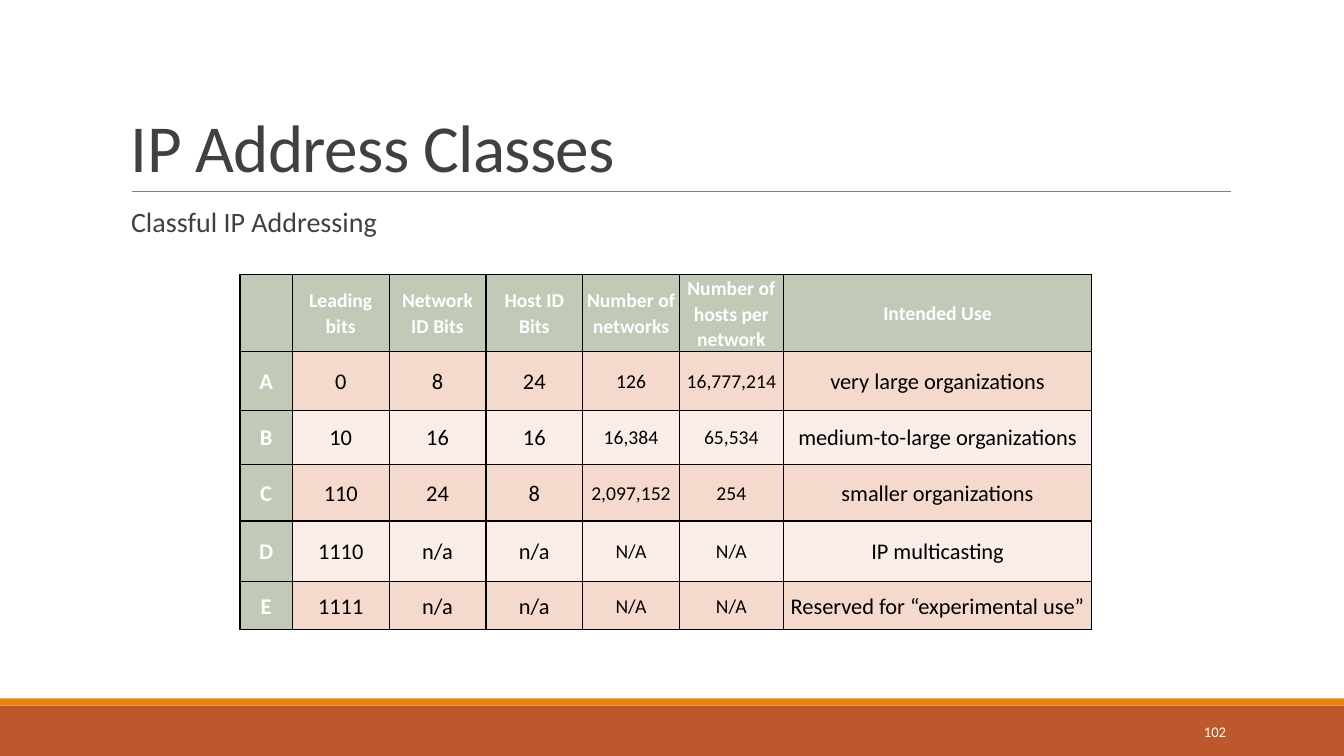
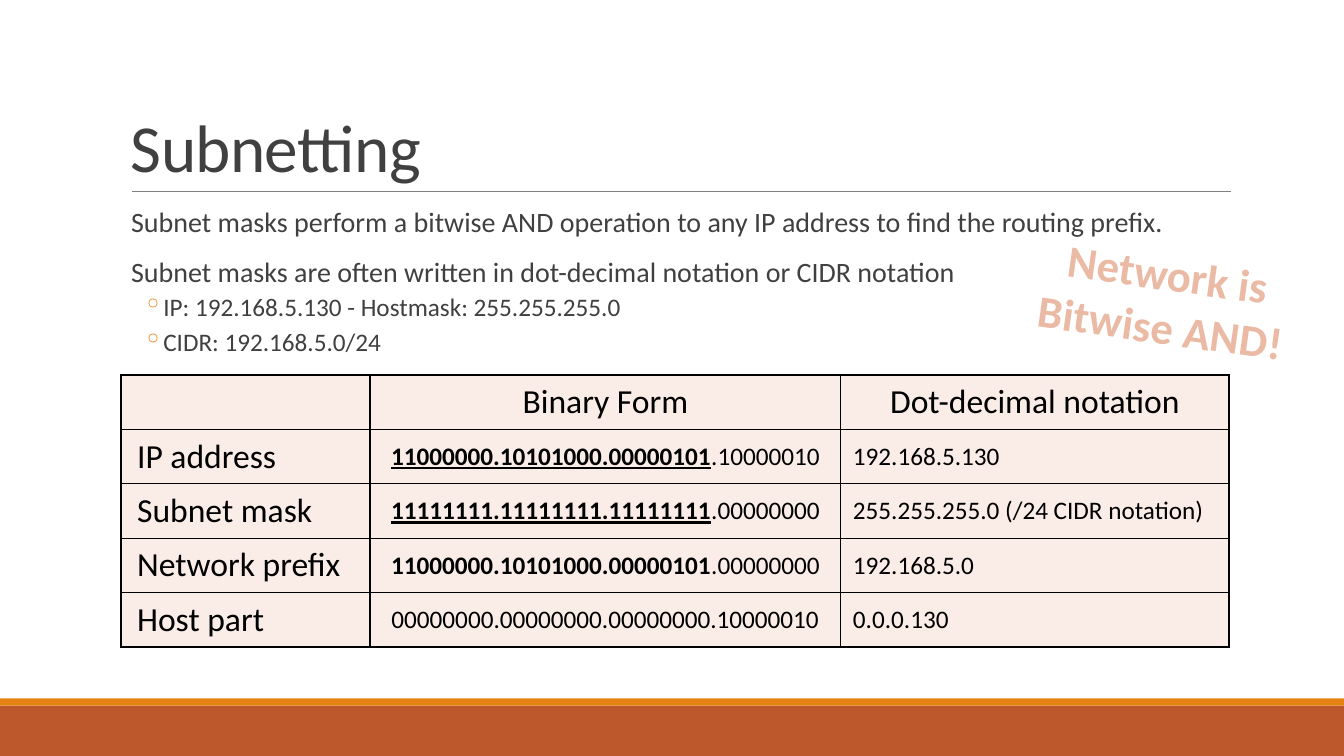
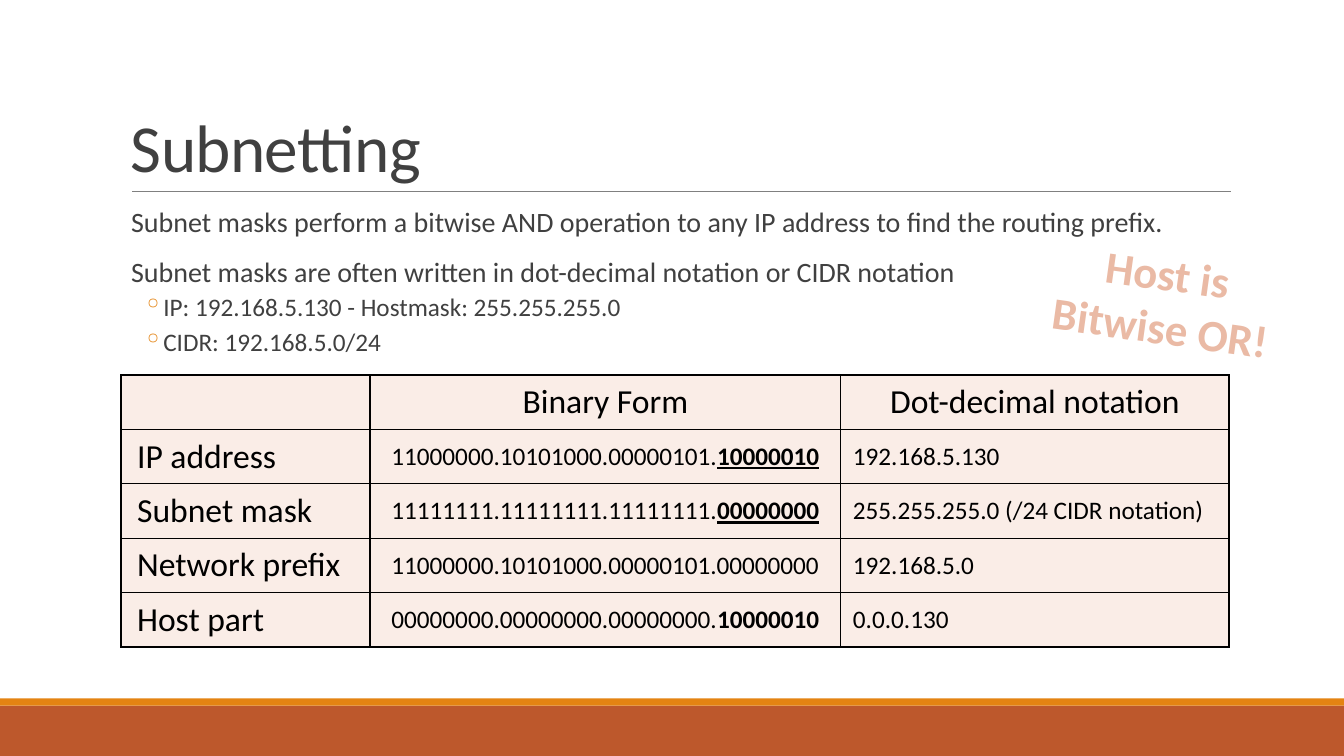
"""Build three slides on IP address classes and subnetting."""
from lxml.etree import SubElement
from pptx import Presentation
from pptx.dml.color import RGBColor
from pptx.enum.shapes import MSO_CONNECTOR as Connector, MSO_SHAPE as Shape
from pptx.enum.text import MSO_ANCHOR as Anchor, PP_ALIGN as Align
from pptx.oxml.ns import qn
from pptx.util import Inches, Pt

FONT = "Calibri"
COLORS = {
    "band": "BD582C", "stripe": "E48312", "rule": "808080", "text": "404040",
    "white": "FFFFFF", "black": "000000", "head": "C1CAB6",
    "odd": "F5D9CC", "even": "FAEDE7", "note": "EABAA5",
}
CLASS_HEADS = ["", "Leading bits", "Network ID Bits", "Host ID Bits",
               "Number of networks", "Number of hosts per network", "Intended Use"]
CLASS_ROWS = [
    ["A", "0", "8", "24", "126", "16,777,214", "very large organizations"],
    ["B", "10", "16", "16", "16,384", "65,534", "medium-to-large organizations"],
    ["C", "110", "24", "8", "2,097,152", "254", "smaller organizations"],
    ["D", "1110", "n/a", "n/a", "N/A", "N/A", "IP multicasting"],
    ["E", "1111", "n/a", "n/a", "N/A", "N/A", "Reserved for “experimental use”"],
]
SUBNET_TOPICS = [
    ("Subnet masks perform a bitwise AND operation to any IP address to find the routing prefix.", 0),
    ("Subnet masks are often written in dot-decimal notation or CIDR notation", 0),
    ("IP: 192.168.5.130 - Hostmask: 255.255.255.0", 1),
    ("CIDR: 192.168.5.0/24", 1),
]
SUBNET_ROWS = [
    ("IP address", "11000000.10101000.00000101.10000010", "192.168.5.130"),
    ("Subnet mask", "11111111.11111111.11111111.00000000", "255.255.255.0 (/24 CIDR notation)"),
    ("Network prefix", "11000000.10101000.00000101.00000000", "192.168.5.0"),
    ("Host part", "00000000.00000000.00000000.10000010", "0.0.0.130"),
]


def rgb(name):
    """Return a named colour."""
    return RGBColor.from_string(COLORS[name])


def write(para, text, size=20, color="text", bold=False, underline=False,
          align=Align.LEFT, line=1.0, before=0, after=0):
    """Add a formatted span to a paragraph."""
    para.alignment, para.line_spacing = align, line
    para.space_before, para.space_after = Pt(before), Pt(after)
    span = para.add_run()
    span.text = text
    font = span.font
    font.name, font.size, font.bold, font.underline = FONT, Pt(size), bold, underline
    font.color.rgb = rgb(color)
    return span


def add_box(page, left, top, width, height, anchor=Anchor.TOP, side=0.1):
    """Add a wrapping text box."""
    box = page.shapes.add_textbox(*map(Inches, (left, top, width, height)))
    frame = box.text_frame
    frame.word_wrap, frame.vertical_anchor = True, anchor
    frame.margin_left = frame.margin_right = Inches(side)
    return box


def add_band(page, top, height, color):
    """Add a full-width band."""
    band = page.shapes.add_shape(Shape.RECTANGLE, 0, Inches(top), Inches(13.33), Inches(height))
    band.shadow.inherit = False
    band.fill.solid()
    band.fill.fore_color.rgb = rgb(color)
    band.line.fill.background()


def add_page(deck, title):
    """Add a page with the shared bands, rule and title."""
    page = deck.slides.add_slide(deck.slide_layouts[6])
    add_band(page, 7, 0.5, "band")
    add_band(page, 6.93, 0.07, "stripe")
    rule = page.shapes.add_connector(Connector.STRAIGHT, *map(Inches, (1.31, 1.9, 12.21, 1.9)))
    rule.line.color.rgb, rule.line.width = rgb("rule"), Pt(0.5)
    SubElement(rule.element.spPr, qn("a:effectLst"))
    box = add_box(page, 1.2, 0.31, 11, 1.59, Anchor.BOTTOM)
    span = write(box.text_frame.paragraphs[0], title, size=48, line=0.85)
    span.font.element.set("spc", "-50") if hasattr(span.font, "element") else span._r.get_or_add_rPr().set("spc", "-50")
    return page


def add_bullet(para, left, hang):
    """Give a paragraph a hanging ring bullet."""
    props = para._p.get_or_add_pPr()
    props.set("marL", str(Inches(left)))
    props.set("indent", str(Inches(-hang)))
    color = SubElement(props, qn("a:buClr"))
    SubElement(color, qn("a:srgbClr"), val=COLORS["stripe"])
    SubElement(props, qn("a:buChar"), char="◦")


def add_body(page, topics):
    """Add the body text with its two outline levels."""
    frame = add_box(page, 1.2, 2.02, 11, 4.4, side=0).text_frame
    for index, (text, level) in enumerate(topics):
        para = frame.add_paragraph() if index else frame.paragraphs[0]
        if level:
            write(para, text, size=18, line=0.9, before=2, after=4)
            add_bullet(para, 0.42, 0.2)
        else:
            write(para, text, line=0.9, before=12, after=2)
            para._p.get_or_add_pPr().set("marL", str(Inches(0.1)))


def add_grid(page, left, top, widths, heights):
    """Add a plain table and return it."""
    table = page.shapes.add_table(len(heights), len(widths), *map(
        Inches, (left, top, sum(widths), sum(heights)))).table
    table.first_row = table.horz_banding = False
    for column, width in zip(table.columns, widths):
        column.width = Inches(width)
    for row, height in zip(table.rows, heights):
        row.height = Inches(height)
    return table


def style_cell(cell, fill, margin, left=None):
    """Set borders, fill and margins of a cell and return its paragraph."""
    props = cell._tc.get_or_add_tcPr()
    for side in ("lnL", "lnR", "lnT", "lnB"):
        border = SubElement(props, qn(f"a:{side}"), w=str(Pt(1)))
        SubElement(SubElement(border, qn("a:solidFill")), qn("a:srgbClr"), val=COLORS["black"])
    cell.fill.solid()
    cell.fill.fore_color.rgb = rgb(fill)
    cell.vertical_anchor = Anchor.MIDDLE
    cell.margin_right = cell.margin_top = cell.margin_bottom = Inches(margin)
    cell.margin_left = Inches(margin if left is None else left)
    return cell.text_frame.paragraphs[0]


def add_note(page, text):
    """Add the tilted outlined note."""
    box = add_box(page, 10.2, 2.39, 2.69, 1.18)
    box.rotation = 8
    span = write(box.text_frame.paragraphs[0], text, size=32, color="note",
                 bold=True, align=Align.CENTER)
    props = span._r.get_or_add_rPr()
    outline = SubElement(props, qn("a:ln"), w=str(Pt(1.75)))
    SubElement(SubElement(outline, qn("a:solidFill")), qn("a:srgbClr"), val=COLORS["band"])
    props.insert(0, outline)


def add_classes_page(deck):
    """Build the page on address classes."""
    page = add_page(deck, "IP Address Classes")
    add_body(page, [("Classful IP Addressing", 0)])
    number = add_box(page, 10.83, 7.06, 1.43, 0.4, Anchor.MIDDLE)
    write(number.text_frame.paragraphs[0], "102", size=10.5, color="white", align=Align.RIGHT)
    table = add_grid(page, 2.38, 2.72, [0.52] + [0.96] * 4 + [1.03, 3.06],
                     [0.76, 0.58, 0.54, 0.56, 0.6, 0.48])
    for row, texts in enumerate([CLASS_HEADS] + CLASS_ROWS):
        for column, text in enumerate(texts):
            head, count = row == 0 or column == 0, column in (4, 5)
            fill = "head" if head else "odd" if row % 2 else "even"
            para = style_cell(table.cell(row, column), fill, 0.01 if count else 0.03)
            if text:
                write(para, text, size=14 if row == 0 or count else 16, bold=head,
                      color="white" if head else "black", align=Align.CENTER, line=1.07)


def add_subnet_page(deck, note, split, marks):
    """Build a subnetting page that stresses one side of each binary value."""
    page = add_page(deck, "Subnetting")
    add_body(page, SUBNET_TOPICS)
    table = add_grid(page, 1.2, 3.72, [2.47, 4.67, 3.85], [0.54] * 5)
    for column, text in enumerate(("", "Binary Form", "Dot-decimal notation")):
        para = style_cell(table.cell(0, column), "even", 0.01)
        if text:
            write(para, text, size=24, color="black", align=Align.CENTER)
    stressed = 0 if note.startswith("Network") else 1
    for row, ((label, binary, decimal), mark) in enumerate(zip(SUBNET_ROWS, marks), 1):
        write(style_cell(table.cell(row, 0), "even", 0.01, 0.16), label, size=24, color="black")
        para = style_cell(table.cell(row, 1), "even", 0.01)
        for side, part in enumerate((binary[:split], binary[split:])):
            bold = side == stressed and mark != "plain"
            write(para, part, size=18, color="black", bold=bold,
                  underline=bold and mark == "underline", align=Align.CENTER)
        write(style_cell(table.cell(row, 2), "even", 0.01, 0.12), decimal, size=18, color="black")
    add_note(page, note)


def main():
    """Build and save the deck."""
    deck = Presentation()
    deck.slide_width, deck.slide_height = Inches(13.33), Inches(7.5)
    add_classes_page(deck)
    add_subnet_page(deck, "Network is Bitwise AND!", 26, ("underline", "underline", "bold", "plain"))
    add_subnet_page(deck, "Host is Bitwise OR!", 27, ("underline", "underline", "plain", "bold"))
    deck.save("out.pptx")


if __name__ == "__main__":
    main()
